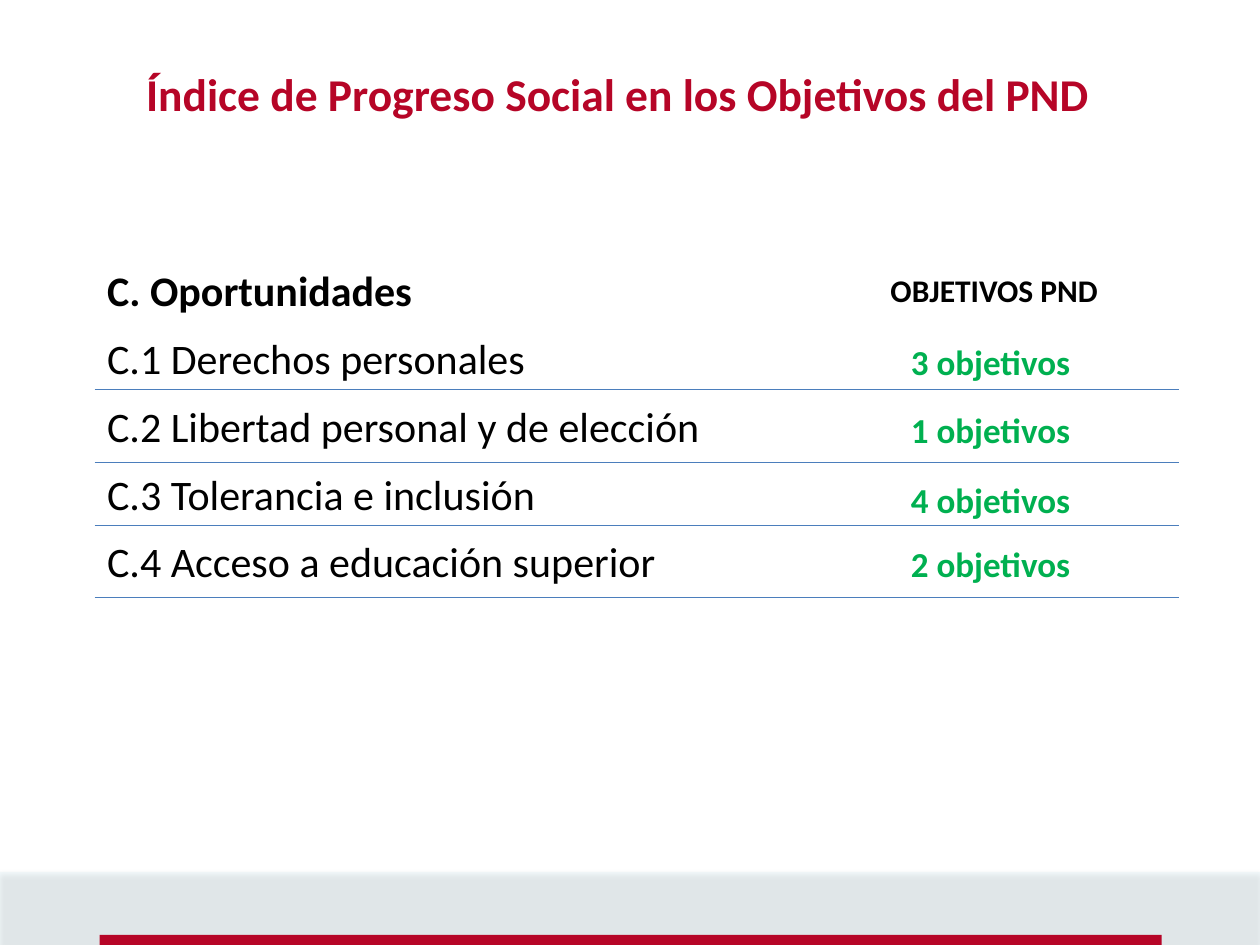
"""Build the slide on social progress and the objectives of the PND."""
import pptx
import pptx.dml.color
import pptx.enum.shapes
import pptx.enum.text
import pptx.oxml
import pptx.oxml.ns
import pptx.util

Pt = pptx.util.Pt
RGBColor = pptx.dml.color.RGBColor
RED = RGBColor(0xB6, 0x05, 0x27)
GREEN = RGBColor(0x00, 0xB0, 0x50)
BLACK = RGBColor(0x00, 0x00, 0x00)
BLUE = RGBColor(0x4B, 0x7E, 0xBC)
PALE_BLUE = RGBColor(0xDB, 0xEE, 0xF4)
FONT = "Calibri"
NAMESPACE = pptx.oxml.ns.nsdecls("a")

HEADING = "C. Oportunidades"
# topic, objectives, top of the objectives, height of the rule
ROWS = [
    ("C.1 Derechos personales", "3 objetivos", 190.8, 222.5),
    ("C.2 Libertad personal y de elección", "1 objetivos", 229.7, 264.2),
    ("C.3 Tolerancia e inclusión", "4 objetivos", 270, 300.2),
    ("C.4 Acceso a educación superior", "2 objetivos", 306.7, 341.3),
]


def add_span(para, text, size, color, bold):
    """Add one formatted run to a paragraph."""
    span = para.add_run()
    span.text = text
    span.font.name = FONT
    span.font.size = Pt(size)
    span.font.bold = bold
    span.font.color.rgb = color


def place(shape, left, top, width, height):
    """Move and size a placeholder and anchor its text at the top."""
    shape.left, shape.top = Pt(left), Pt(top)
    shape.width, shape.height = Pt(width), Pt(height)
    shape.text_frame.auto_size = pptx.enum.text.MSO_AUTO_SIZE.NONE
    shape.text_frame.vertical_anchor = pptx.enum.text.MSO_ANCHOR.TOP


def fill_title(title):
    """Write the slide title."""
    place(title, 76.3, 37.4, 622, 45.4)
    para = title.text_frame.paragraphs[0]
    para.alignment = pptx.enum.text.PP_ALIGN.LEFT
    para.line_spacing = 0.9
    add_span(para, "Índice de Progreso Social en los Objetivos del PND", 26, RED, True)


def fill_list(body):
    """Write the heading and its topics without bullets."""
    place(body, 54, 145.4, 425.5, 195)
    frame = body.text_frame
    for index, text in enumerate([HEADING] + [row[0] for row in ROWS]):
        para = frame.add_paragraph() if index else frame.paragraphs[0]
        properties = para._p.get_or_add_pPr()
        properties.set("marL", "0")
        properties.set("indent", "0")
        properties.append(pptx.oxml.parse_xml(f"<a:buNone {NAMESPACE}/>"))
        para.line_spacing = 1.07
        para.space_before = Pt(0)
        para.space_after = Pt(8)
        add_span(para, text, 24, BLACK, index == 0)


def add_label(page, text, left, top, width, height, size, color):
    """Add a bold one-line text box."""
    box = page.shapes.add_textbox(Pt(left), Pt(top), Pt(width), Pt(height))
    box.text_frame.word_wrap = False
    add_span(box.text_frame.paragraphs[0], text, size, color, True)


def add_rule(page, top):
    """Add a thin horizontal line under a row."""
    rule = page.shapes.add_connector(
        pptx.enum.shapes.MSO_CONNECTOR.STRAIGHT, Pt(54), Pt(top), Pt(674), Pt(top))
    rule.line.color.rgb = BLUE
    rule.line.width = Pt(0.75)
    rule._element.spPr.append(pptx.oxml.parse_xml(f"<a:effectLst {NAMESPACE}/>"))


def add_band(page, left, top, width, height, color):
    """Add a plain filled rectangle."""
    band = page.shapes.add_shape(
        pptx.enum.shapes.MSO_SHAPE.RECTANGLE, Pt(left), Pt(top), Pt(width), Pt(height))
    band.shadow.inherit = False
    band.fill.solid()
    band.fill.fore_color.rgb = color
    band.line.fill.background()
    return band


def soften(band):
    """Make a band translucent with a soft shadow below it."""
    properties = band._element.spPr
    color = properties.find(".//" + pptx.oxml.ns.qn("a:srgbClr"))
    color.append(pptx.oxml.parse_xml(f'<a:alpha {NAMESPACE} val="32000"/>'))
    effects = properties.find(pptx.oxml.ns.qn("a:effectLst"))
    effects.append(pptx.oxml.parse_xml(
        f'<a:outerShdw {NAMESPACE} blurRad="{Pt(3.1)}" dist="{Pt(1.8)}" '
        'dir="5400000" rotWithShape="0"><a:srgbClr val="000000">'
        '<a:alpha val="35000"/></a:srgbClr></a:outerShdw>'))


def main():
    """Build and save the deck."""
    deck = pptx.Presentation()
    deck.slide_width, deck.slide_height = Pt(720), Pt(540)
    page = deck.slides.add_slide(deck.slide_layouts[1])
    soften(add_band(page, 0, 498.2, 720, 41.8, PALE_BLUE))
    add_band(page, 56.9, 534.2, 607, 5.8, RED)
    fill_title(page.shapes.title)
    fill_list(page.placeholders[1])
    add_label(page, "OBJETIVOS PND", 501.8, 151.2, 133.9, 29, 18, BLACK)
    for _, objectives, top, rule_top in ROWS:
        add_label(page, objectives, 513.4, top, 106.6, 31.5, 20, GREEN)
        add_rule(page, rule_top)
    deck.save("out.pptx")


if __name__ == "__main__":
    main()
